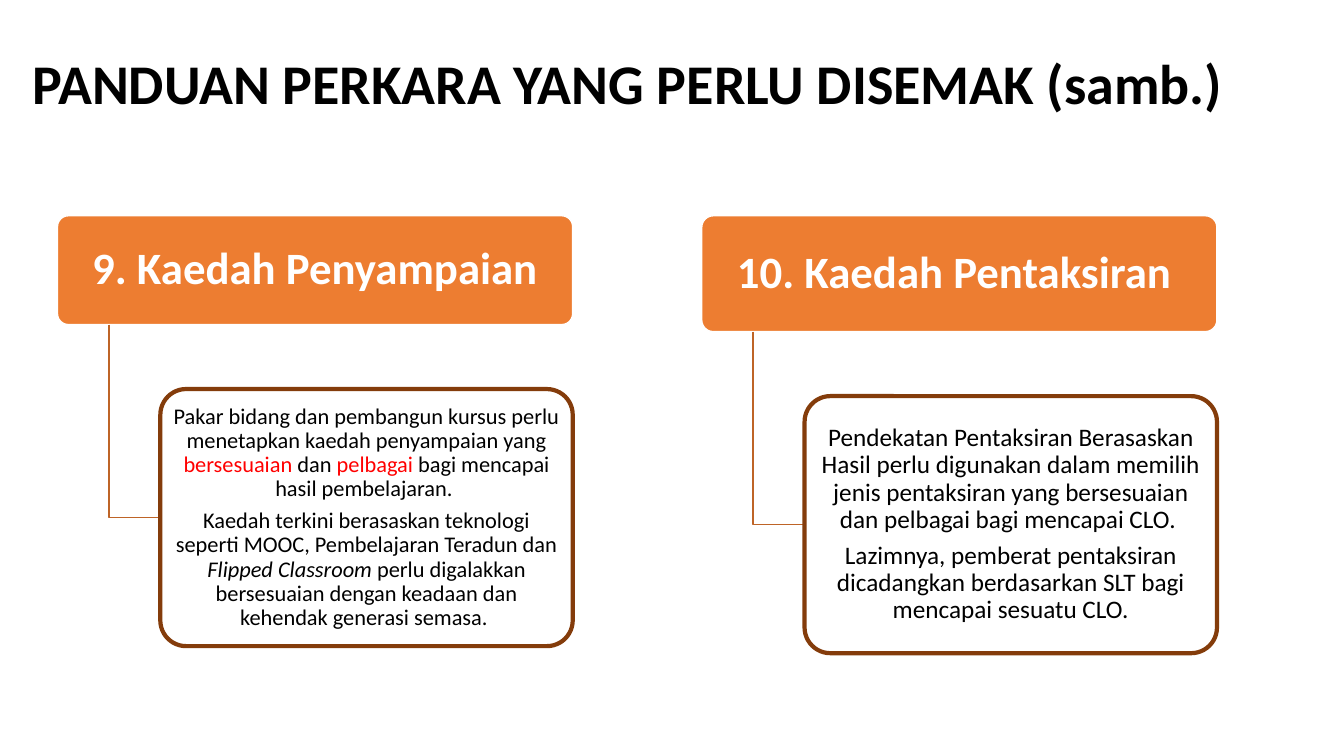
from lxml import etree
from pptx import Presentation
from pptx.dml.color import RGBColor
from pptx.enum.shapes import MSO_SHAPE
from pptx.enum.text import MSO_ANCHOR, MSO_AUTO_SIZE, PP_ALIGN
from pptx.oxml.ns import qn
from pptx.util import Inches, Pt

ROUNDED = MSO_SHAPE.ROUNDED_RECTANGLE
MIDDLE = MSO_ANCHOR.MIDDLE
LEFT, CENTER = PP_ALIGN.LEFT, PP_ALIGN.CENTER
NO_FIT = MSO_AUTO_SIZE.NONE

BLACK = RGBColor(0x00, 0x00, 0x00)
WHITE = RGBColor(0xFF, 0xFF, 0xFF)
RED = RGBColor(0xFF, 0x00, 0x00)
ORANGE = RGBColor(0xED, 0x7D, 0x31)
RUST = RGBColor(0xBE, 0x64, 0x27)
BROWN = RGBColor(0x84, 0x3C, 0x0B)
FONT = "Calibri"

# Content: each paragraph is a list of (text, style) runs
TITLE = "PANDUAN PERKARA YANG PERLU DISEMAK (samb.)"
TOPICS = [
    {
        "heading": "9. Kaedah Penyampaian",
        "left": 0.57, "heading_height": 1.08, "size": 16, "inset": 0.03,
        "paras": [
            [("Pakar bidang dan pembangun kursus perlu menetapkan kaedah "
              "penyampaian yang ", {}),
             ("bersesuaian", {"color": RED}),
             (" dan ", {}),
             ("pelbagai", {"color": RED}),
             (" bagi mencapai hasil pembelajaran. ", {})],
            [("Kaedah terkini berasaskan teknologi seperti MOOC, "
              "Pembelajaran Teradun dan ", {}),
             ("Flipped Classroom", {"italic": True}),
             (" perlu digalakkan bersesuaian dengan keadaan dan kehendak "
              "generasi semasa. ", {})],
        ],
    },
    {
        "heading": "10. Kaedah Pentaksiran ",
        "left": 6.96, "heading_height": 1.15, "size": 18, "inset": 0.04,
        "paras": [
            [("Pendekatan Pentaksiran Berasaskan Hasil perlu digunakan dalam "
              "memilih jenis pentaksiran yang bersesuaian dan pelbagai bagi "
              "mencapai CLO. ", {})],
            [("Lazimnya, pemberat pentaksiran dicadangkan berdasarkan SLT "
              "bagi mencapai sesuatu CLO.", {})],
        ],
    },
]

# Layout in inches
TOPIC_TOP, HEADING_WIDTH = 2.14, 5.11
STEM_INDENT, BODY_INDENT = 0.51, 1.02
BODY_GAP, BODY_HEIGHT = 0.64, 2.55
BODY_WIDTH = HEADING_WIDTH - BODY_INDENT


def write_text(frame, paras, size, align=CENTER, after=0.35, **base):
    frame.word_wrap = True
    frame.auto_size = NO_FIT
    frame.vertical_anchor = MIDDLE
    for index, runs in enumerate(paras):
        para = frame.add_paragraph() if index else frame.paragraphs[0]
        para.alignment = align
        para.line_spacing = 0.9
        para.space_before = Pt(0)
        para.space_after = Pt(size * after)
        for text, style in runs:
            look = {"color": BLACK, "bold": False, "italic": False, **base, **style}
            span = para.add_run()
            span.text = text
            span.font.name = FONT
            span.font.size = Pt(size)
            span.font.bold = look["bold"]
            span.font.italic = look["italic"]
            span.font.color.rgb = look["color"]


def add_box(page, left, top, width, height, fill, line, weight, inset_x, inset_y):
    box = page.shapes.add_shape(
        ROUNDED, Inches(left), Inches(top), Inches(width), Inches(height))
    box.shadow.inherit = False
    box.adjustments[0] = 0.1
    box.fill.solid()
    box.fill.fore_color.rgb = fill
    box.line.color.rgb = line
    box.line.width = Pt(weight)
    frame = box.text_frame
    frame.margin_left = frame.margin_right = Inches(inset_x)
    frame.margin_top = frame.margin_bottom = Inches(inset_y)
    return box


def add_elbow(page, x, top, right, bottom):
    builder = page.shapes.build_freeform(Inches(x), Inches(top))
    builder.add_line_segments(
        [(Inches(x), Inches(bottom)), (Inches(right), Inches(bottom))], close=False)
    elbow = builder.convert_to_shape()
    elbow.shadow.inherit = False
    elbow.fill.background()
    elbow.line.color.rgb = RUST
    elbow.line.width = Pt(1)


def add_topic(page, topic):
    left = topic["left"]
    heading_bottom = TOPIC_TOP + topic["heading_height"]
    body_left = left + BODY_INDENT
    body_top = heading_bottom + BODY_GAP

    # Heading bar
    heading = add_box(page, left, TOPIC_TOP, HEADING_WIDTH,
                      topic["heading_height"], ORANGE, WHITE, 1, 0.07, 0.04)
    write_text(heading.text_frame, [[(topic["heading"], {})]], 32,
               color=WHITE, bold=True)

    # Elbow from the heading to the middle of the body
    add_elbow(page, left + STEM_INDENT, heading_bottom,
              body_left, body_top + BODY_HEIGHT / 2)

    # Body box with a slightly transparent fill
    inset = topic["inset"]
    body = add_box(page, body_left, body_top, BODY_WIDTH, BODY_HEIGHT,
                   WHITE, BROWN, 3, inset, inset - 0.01)
    tint = body.fill._xPr.find(qn("a:solidFill")).find(qn("a:srgbClr"))
    etree.SubElement(tint, qn("a:alpha")).set("val", "90000")
    write_text(body.text_frame, topic["paras"], topic["size"])


def main():
    deck = Presentation()
    deck.slide_width, deck.slide_height = Inches(13.33), Inches(7.5)
    page = deck.slides.add_slide(deck.slide_layouts.get_by_name("Title Only"))

    # Title
    title = page.shapes.title
    title.left, title.top = Inches(0.22), Inches(0.13)
    title.width, title.height = Inches(12.88), Inches(1.45)
    write_text(title.text_frame, [[(TITLE, {})]], 40, LEFT, after=0, bold=True)

    for topic in TOPICS:
        add_topic(page, topic)

    deck.save("out.pptx")


if __name__ == "__main__":
    main()
